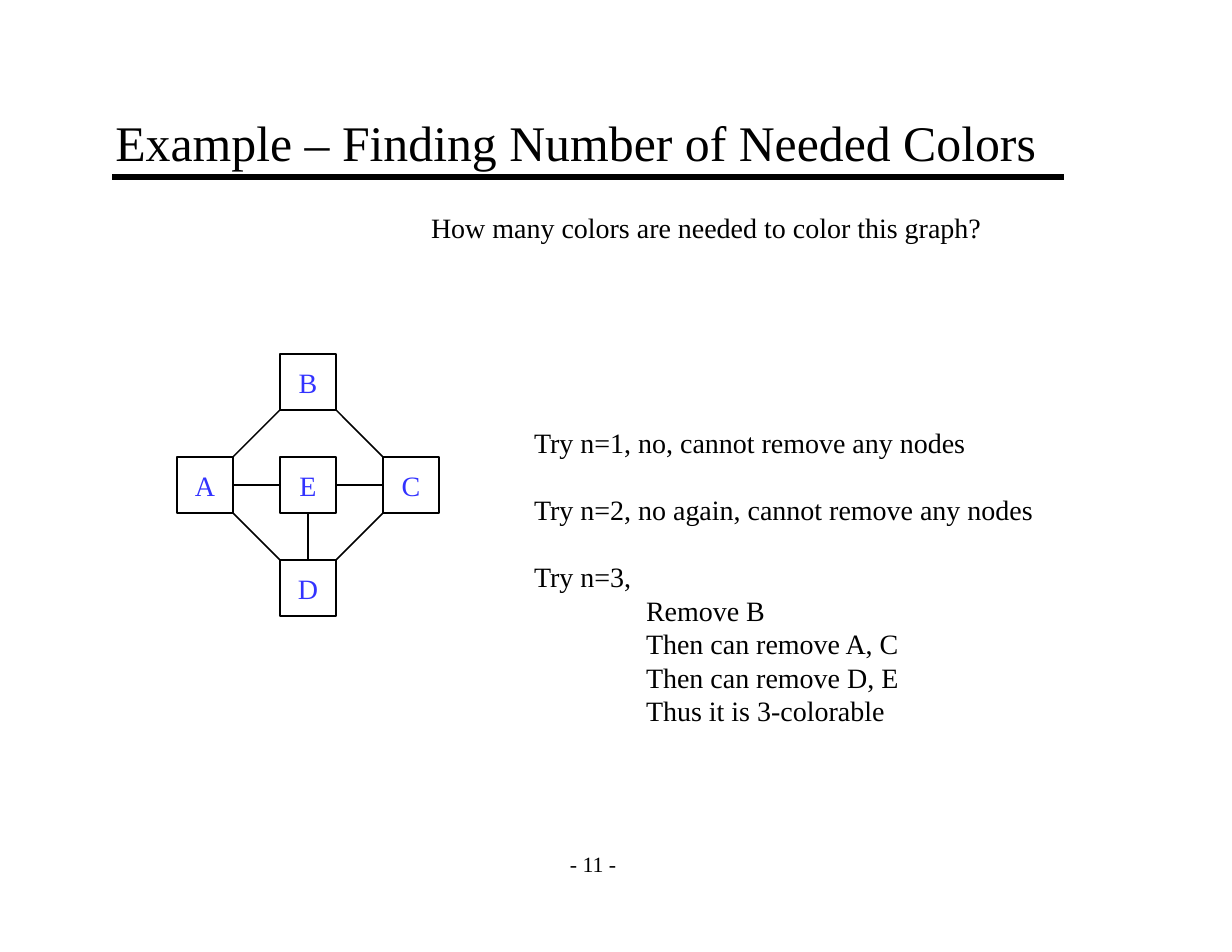
"""Build a slide on finding how many colors a small graph needs."""
from lxml.etree import SubElement
from pptx import Presentation
from pptx.dml.color import RGBColor
from pptx.enum.shapes import MSO_CONNECTOR, MSO_SHAPE
from pptx.enum.text import MSO_ANCHOR, PP_ALIGN
from pptx.oxml.ns import qn
from pptx.util import Inches, Pt

TITLE = "Example – Finding Number of Needed Colors"
QUESTION = "How many colors are needed to color this graph?"
TRIES = [
    ("Try n=1, no, cannot remove any nodes", []),
    ("Try n=2, no again, cannot remove any nodes", []),
    ("Try n=3,", ["Remove B", "Then can remove A, C", "Then can remove D, E",
                  "Thus it is 3-colorable"]),
]
PAGE = "- 11 -"
NODES = {"A": (-1, 0), "B": (0, -1), "E": (0, 0), "D": (0, 1), "C": (1, 0)}
EDGES = ["AB", "BC", "AD", "DC", "AE", "EC", "ED"]
SITES = {(1, 0): (3, 1), (0, 1): (2, 0)}
CENTER_X, CENTER_Y, STEP, SIDE = 2.75, 4.33, 0.92, 0.5
BLACK, BLUE = "000000", "3333FF"


def rgb(value):
    return RGBColor.from_string(value)


def style(p, size, color=BLACK, align=PP_ALIGN.LEFT):
    p.alignment = align
    p.font.name = "Times New Roman"
    p.font.size = Pt(size)
    p.font.color.rgb = rgb(color)


def set_frame(tf, anchor, wrap, x=0.1, y=0.05):
    tf.vertical_anchor = anchor
    tf.word_wrap = wrap
    tf.margin_left = tf.margin_right = Inches(x)
    tf.margin_top = tf.margin_bottom = Inches(y)


def add_text(s, box, paragraphs, size=18, align=PP_ALIGN.LEFT, anchor=MSO_ANCHOR.TOP):
    tf = s.shapes.add_textbox(*map(Inches, box)).text_frame
    set_frame(tf, anchor, False)
    for i, (text, indent, before) in enumerate(paragraphs):
        p = tf.add_paragraph() if i else tf.paragraphs[0]
        p.text = text
        if indent:
            p._p.get_or_add_pPr().set("marL", str(Inches(indent)))
        if before:
            p.space_before = Pt(before)
        style(p, size, align=align)


def add_line(s, start, end, width):
    line = s.shapes.add_connector(MSO_CONNECTOR.STRAIGHT, *map(Inches, start + end))
    line.line.color.rgb = rgb(BLACK)
    line.line.width = Pt(width)
    SubElement(line._element.spPr, qn("a:effectLst"))
    return line


def center(name):
    col, row = NODES[name]
    return CENTER_X + col * STEP, CENTER_Y + row * STEP


def add_node(s, name):
    x, y = center(name)
    node = s.shapes.add_shape(MSO_SHAPE.RECTANGLE, Inches(x - SIDE / 2),
                              Inches(y - SIDE / 2), Inches(SIDE), Inches(SIDE))
    node.shadow.inherit = False
    node.fill.background()
    node.line.color.rgb = rgb(BLACK)
    node.line.width = Pt(1)
    set_frame(node.text_frame, MSO_ANCHOR.MIDDLE, False)
    p = node.text_frame.paragraphs[0]
    p.text = name
    style(p, 18, BLUE, PP_ALIGN.CENTER)
    return node


def add_edge(s, nodes, a, b):
    way = tuple(q - p for p, q in zip(NODES[a], NODES[b]))
    start = tuple(c + d * SIDE / 2 for c, d in zip(center(a), way))
    end = tuple(c - d * SIDE / 2 for c, d in zip(center(b), way))
    line = add_line(s, start, end, 1)
    if way in SITES:
        line.begin_connect(nodes[a], SITES[way][0])
        line.end_connect(nodes[b], SITES[way][1])


def main():
    prs = Presentation()
    prs.slide_width, prs.slide_height = Inches(11), Inches(8.5)
    s = prs.slides.add_slide(prs.slide_layouts[5])

    title = s.shapes.title
    title.left, title.top, title.width, title.height = map(Inches, (0.92, 0.92, 8.67, 0.67))
    set_frame(title.text_frame, MSO_ANCHOR.BOTTOM, True, 0.11, 0.06)
    p = title.text_frame.paragraphs[0]
    p.text = TITLE
    style(p, 32)

    add_line(s, (1, 1.58), (9.5, 1.58), 4)
    add_text(s, (4.92, 7.5, 0.75, 0.42), [(PAGE, 0, 0)], 14,
             PP_ALIGN.CENTER, MSO_ANCHOR.MIDDLE)

    nodes = {name: add_node(s, name) for name in NODES}
    for a, b in EDGES:
        add_edge(s, nodes, a, b)

    add_text(s, (3.75, 1.83, 5.12, 0.4), [(QUESTION, 0, 0)])
    lines = []
    for text, steps in TRIES:
        lines.append((text, 0, 21.5 if lines else 0))
        lines += [(step, 1, 0) for step in steps]
    add_text(s, (4.67, 3.75, 4.67, 2.8), lines)
    prs.save("out.pptx")


if __name__ == "__main__":
    main()
